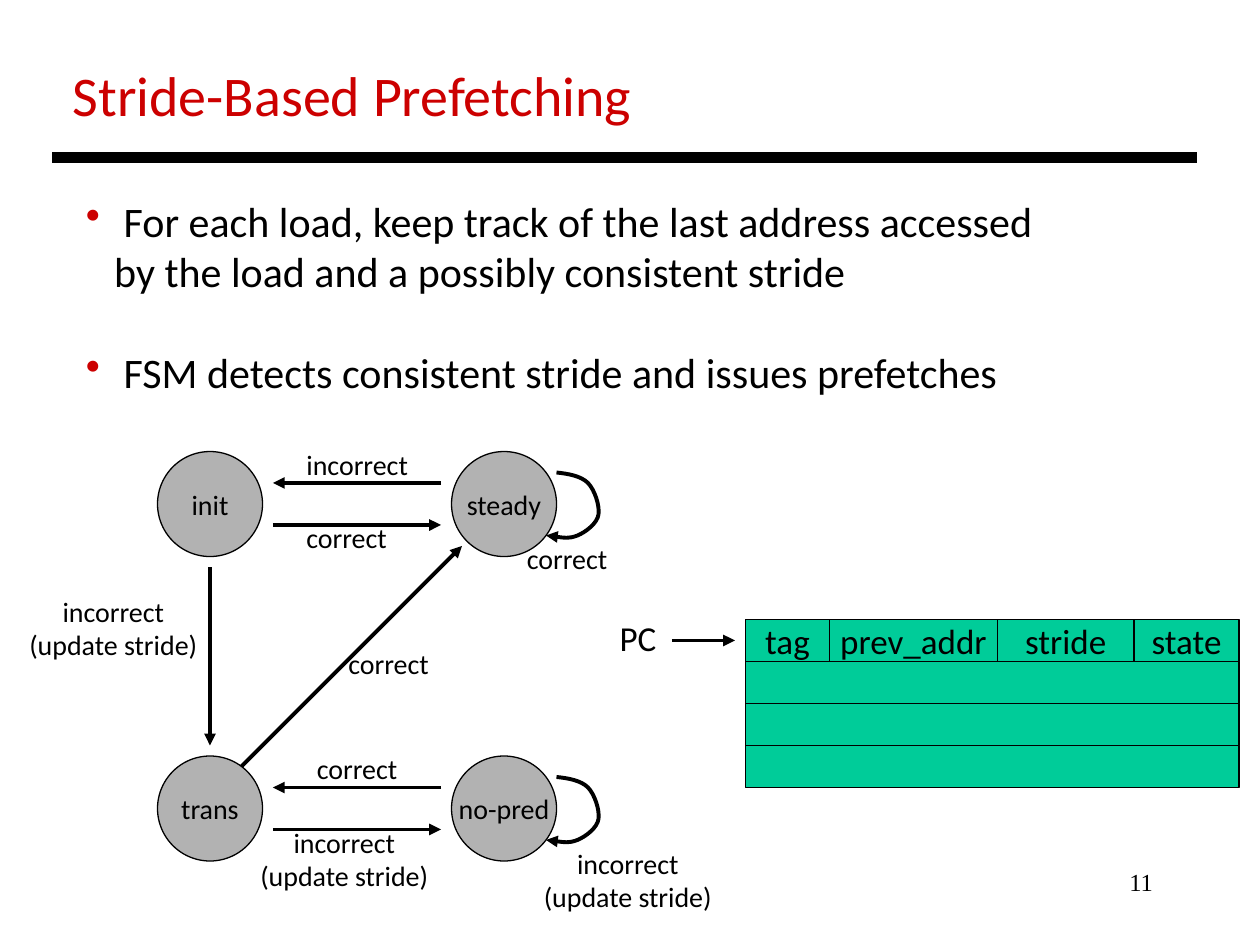
from lxml import etree
from pptx import Presentation
from pptx import util as u
from pptx.dml.color import RGBColor
from pptx.enum import shapes, text
from pptx.oxml.ns import qn

Pt = u.Pt
COLORS = {"ink": "000000", "title": "CC0000", "state": "B2B2B2", "table": "00CC99"}
LEFT, CENTER, RIGHT = text.PP_ALIGN.LEFT, text.PP_ALIGN.CENTER, text.PP_ALIGN.RIGHT


def color(name):
    return RGBColor.from_string(COLORS[name])


def add_span(para, words, size, ink="ink", face="Calibri"):
    span = para.add_run()
    span.text = words
    span.font.size = Pt(size)
    span.font.name = face
    span.font.color.rgb = color(ink)


def add_text(page, left, top, width, height, lines, size, align=LEFT, **style):
    box = page.shapes.add_textbox(Pt(left), Pt(top), Pt(width), Pt(height))
    frame = box.text_frame
    frame.word_wrap = False
    for number, line in enumerate(lines):
        para = frame.add_paragraph() if number else frame.paragraphs[0]
        para.alignment = align
        add_span(para, line, size, **style)


def add_filled(page, kind, left, top, width, height, fill, words="", size=16):
    shape = page.shapes.add_shape(kind, Pt(left), Pt(top), Pt(width), Pt(height))
    shape.shadow.inherit = False
    shape.fill.solid()
    shape.fill.fore_color.rgb = color(fill)
    shape.line.color.rgb = color("ink")
    shape.line.width = Pt(0.75)
    if words:
        frame = shape.text_frame
        frame.word_wrap = False
        frame.vertical_anchor = text.MSO_ANCHOR.MIDDLE
        frame.paragraphs[0].alignment = CENTER
        add_span(frame.paragraphs[0], words, size)


def style_line(shape, width, arrow):
    shape.line.color.rgb = color("ink")
    shape.line.width = Pt(width)
    if arrow:
        etree.SubElement(shape.line._get_or_add_ln(), qn("a:tailEnd"), type="triangle")


def add_line(page, x1, y1, x2, y2, width=2.25, arrow=True):
    line = page.shapes.add_connector(
        shapes.MSO_CONNECTOR.STRAIGHT, Pt(x1), Pt(y1), Pt(x2), Pt(y2))
    style_line(line, width, arrow)
    etree.SubElement(line._element.spPr, qn("a:effectLst"))


def add_self_loop(page, left, top):
    """Curved arrow from a state back to itself; left and top are the state's."""
    points = [(60, 12), (66.7, 12.7), (74, 14), (78, 18),
              (81.8, 22), (84.7, 30.7), (84, 36),
              (83.3, 41), (76.8, 46), (72, 48),
              (66.7, 50), (60, 48.7), (54, 48)]
    points = [(Pt(left + x), Pt(top + y)) for x, y in points]
    builder = page.shapes.build_freeform(*points[0])
    builder.add_line_segments(points[1:], close=False)
    loop = builder.convert_to_shape()
    loop.shadow.inherit = False
    loop.fill.background()
    style_line(loop, 2.25, True)
    # Turn each three straight segments into one cubic curve
    steps = list(loop._element.iter(qn("a:lnTo")))
    outline = steps[0].getparent()
    for first in range(0, len(steps), 3):
        curve = etree.SubElement(outline, qn("a:cubicBezTo"))
        for step in steps[first:first + 3]:
            curve.append(step[0])
            outline.remove(step)


def add_header(page, left, top, width):
    add_text(page, left + 4.5, top, 337, 46, ["Stride-Based Prefetching"], 32, ink="title")
    add_line(page, left, top + 59, left + width, top + 59, width=6, arrow=False)


def add_bullets(page, left, top, width, height):
    points = [
        [" For each load, keep track of the last address accessed",
         "by the load and a possibly consistent stride"],
        [" FSM detects consistent stride and issues prefetches"],
    ]
    box = page.shapes.add_textbox(Pt(left), Pt(top), Pt(width), Pt(height))
    frame = box.text_frame
    frame.word_wrap = False
    for number, lines in enumerate(points):
        para = frame.add_paragraph() if number else frame.paragraphs[0]
        para.space_before = Pt(29 * number)
        props = para._p.get_or_add_pPr()
        props.set("marL", str(Pt(16.2)))
        props.set("indent", str(-Pt(16.2)))
        tint = etree.SubElement(props, qn("a:buClr"))
        etree.SubElement(tint, qn("a:srgbClr"), val=COLORS["title"])
        etree.SubElement(props, qn("a:buChar"), char="•")
        for index, line in enumerate(lines):
            if index:
                para.add_line_break()
            add_span(para, line, 24)


def add_state_machine(page, left, top):
    """States on a 2 x 2 grid, with transitions and their labels."""
    size, across, down = 60, 168, 174
    states = [["init", "steady"], ["trans", "no-pred"]]
    for row, names in enumerate(states):
        y = top + row * down
        for column, name in enumerate(names):
            add_filled(page, shapes.MSO_SHAPE.OVAL, left + column * across, y,
                       size, size, "state", name)
        # Arrows both ways between the two states, and the loop on the right one
        start, end = left + size + 6, left + across - 6
        add_line(page, start, y + 42, end, y + 42)
        add_line(page, end, y + 18, start, y + 18)
        add_self_loop(page, left + across, y)

    # Transitions between the rows
    add_line(page, left + 30, top + size + 6, left + 30, top + down - 6)
    add_line(page, left + 48, top + down + 6, left + across + 6, top + 54)

    # Transition labels
    update = ["incorrect", "(update stride)"]
    labels = [
        (78, -6, 75.5, ["incorrect"]), (78, 36, 63.5, ["correct"]),
        (204, 48, 63.5, ["correct"]), (102, 108, 63.5, ["correct"]),
        (84, 168, 63.5, ["correct"]), (-81, 78, 111.5, update),
        (51, 210, 111.5, update), (213, 222, 111.5, update),
    ]
    for x, y, width, lines in labels:
        align = CENTER if len(lines) > 1 else LEFT
        add_text(page, left + x, top + y, width, 7.2 + 19.5 * len(lines), lines, 16, align)


def add_prediction_table(page, left, top):
    row_height = 24
    fields = [("tag", 48), ("prev_addr", 96), ("stride", 78), ("state", 60)]
    x = left
    for name, width in fields:
        add_filled(page, shapes.MSO_SHAPE.RECTANGLE, x, top, width, row_height,
                   "table", name, 20)
        x += width
    for row in range(1, 4):
        add_filled(page, shapes.MSO_SHAPE.RECTANGLE, left, top + row * row_height,
                   x - left, row_height, "table")
    # Program counter that indexes the table
    add_text(page, left - 79, top - 5, 36, 31.5, ["PC"], 20)
    add_line(page, left - 42, top + 12, left - 6, top + 12)


def main():
    deck = Presentation()
    deck.slide_width, deck.slide_height = Pt(720), Pt(540)
    page = deck.slides.add_slide(deck.slide_layouts[6])
    add_text(page, 516, 492, 150, 36, ["11"], 14, RIGHT, face="Times New Roman")
    add_header(page, 30, 31, 654)
    add_bullets(page, 42, 108, 556, 124)
    add_state_machine(page, 90, 258)
    add_prediction_table(page, 426, 354)
    deck.save("out.pptx")


if __name__ == "__main__":
    main()
